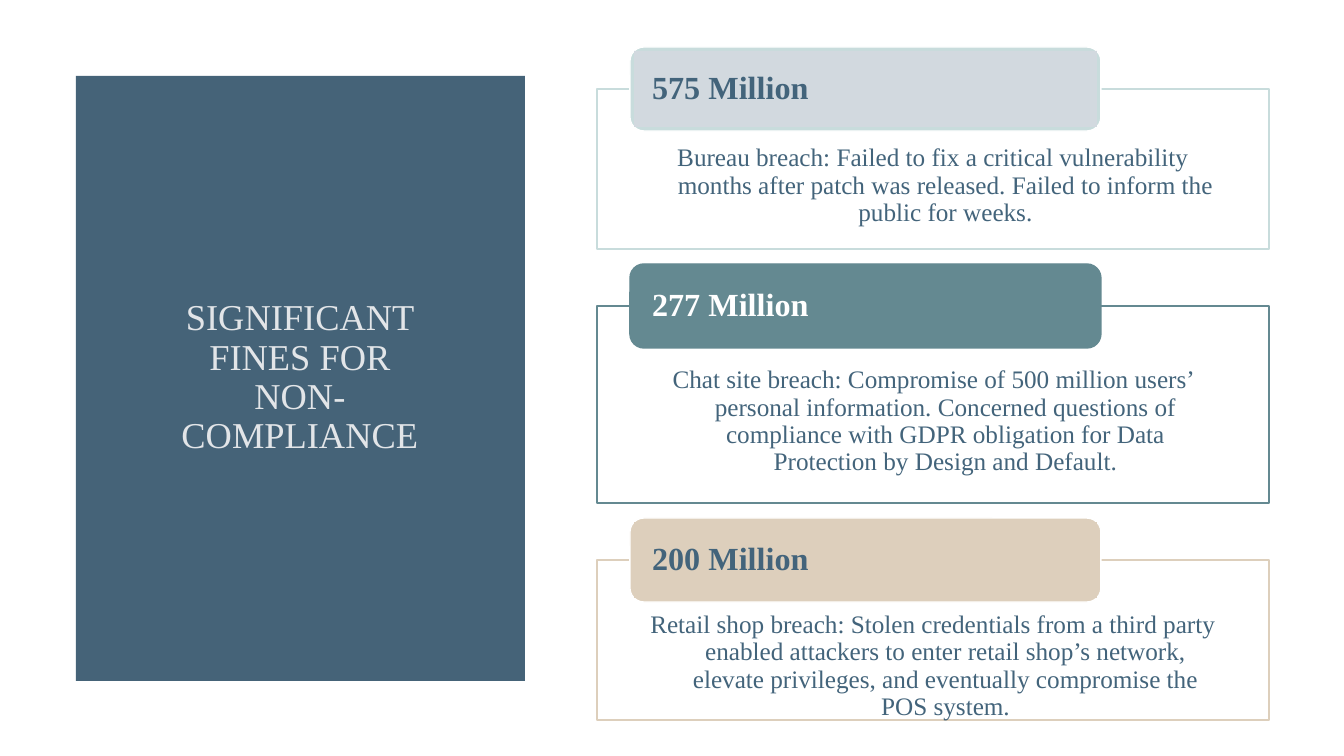
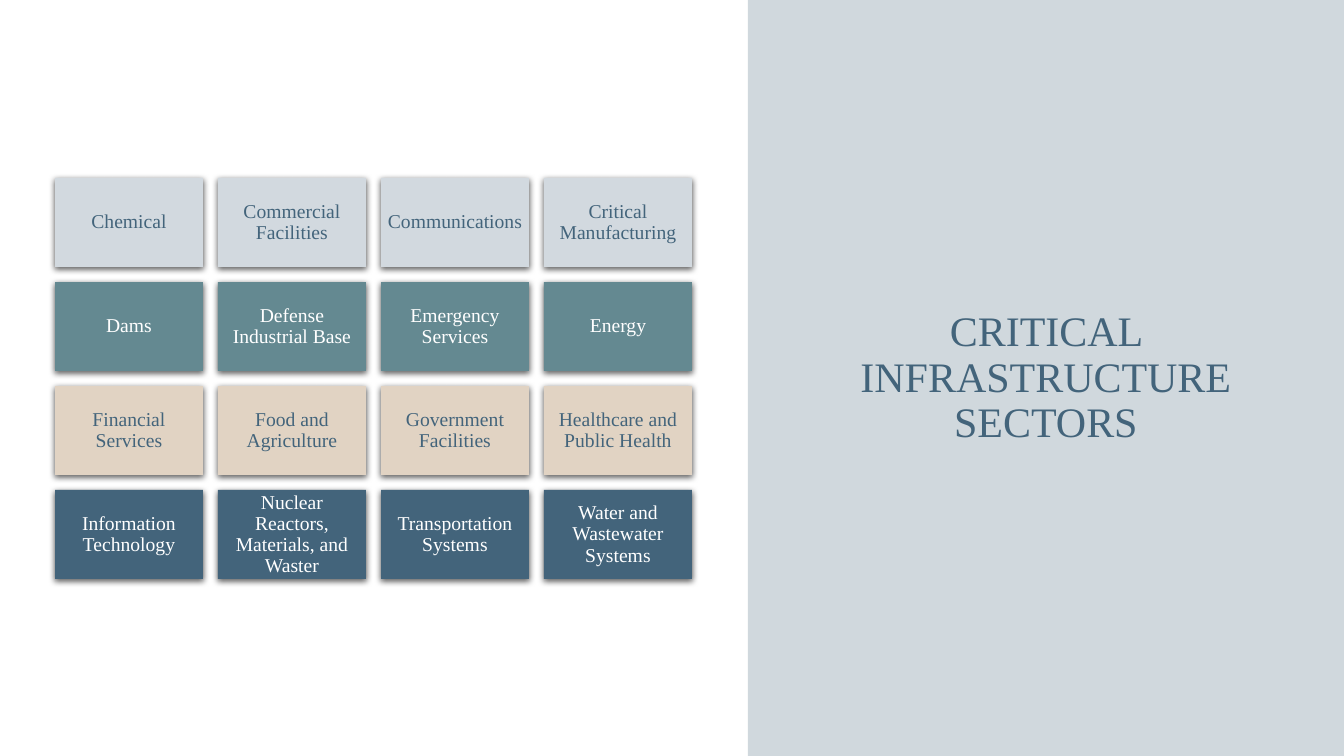
from lxml import etree
from pptx import Presentation
from pptx.dml.color import RGBColor
from pptx.enum.shapes import MSO_SHAPE
from pptx.enum.text import MSO_ANCHOR, MSO_AUTO_SIZE, PP_ALIGN
from pptx.oxml.ns import qn
from pptx.util import Pt

PX = 914400 / 100.8
PAGE_WIDTH, PAGE_HEIGHT = 1344, 756
TITLE_ONLY = 5

RECTANGLE, ROUNDED = MSO_SHAPE.RECTANGLE, MSO_SHAPE.ROUNDED_RECTANGLE
TOP, MIDDLE = MSO_ANCHOR.TOP, MSO_ANCHOR.MIDDLE
LEFT, CENTER = PP_ALIGN.LEFT, PP_ALIGN.CENTER
NO_AUTOFIT = MSO_AUTO_SIZE.NONE

FONT = "Times New Roman"
WHITE = RGBColor(0xFF, 0xFF, 0xFF)
PANEL_BLUE = RGBColor(0x45, 0x63, 0x78)
PANEL_PALE = RGBColor(0xD0, 0xD8, 0xDD)
TITLE_PALE = RGBColor(0xE2, 0xE5, 0xE8)
NAVY = RGBColor(0x43, 0x64, 0x7B)
MIST = RGBColor(0xD2, 0xD9, 0xDF)
MINT = RGBColor(0xC8, 0xDC, 0xDC)
TEAL = RGBColor(0x64, 0x89, 0x91)
SAND = RGBColor(0xDD, 0xCF, 0xBC)
SAND_PALE = RGBColor(0xE1, 0xD3, 0xC3)

TITLE_INSETS = (10, 5, 10, 5)
FRAME_LEFT, FRAME_TOP, FRAME_WIDTH, FRAME_GAP = 597, 89, 672, 57
FRAME_INSETS = (52, 52, 52, 18)
HANGING_INDENT = 25
CHIP_LEFT, CHIP_WIDTH, CHIP_HEIGHT, CHIP_RIM = 630, 471, 84, 4
CHIP_INSETS = (18, 0, 18, 0)
GRID_LEFT, GRID_TOP = 55, 178
TILE_WIDTH, TILE_HEIGHT, TILE_GAP = 148, 89, 15
TILE_INSETS = (6, 6, 6, 6)

FINES = [
    ("575 Million",
     "Bureau breach: Failed to fix a critical vulnerability months after "
     "patch was released. Failed to inform the public for weeks.",
     160, MINT, MIST, WHITE, NAVY, MIDDLE),
    ("277 Million",
     "Chat site breach: Compromise of 500 million users’ personal information. "
     "Concerned questions of compliance with GDPR obligation for Data "
     "Protection by Design and Default.",
     197, TEAL, TEAL, TEAL, WHITE, MIDDLE),
    ("200 Million",
     "Retail shop breach: Stolen credentials from a third party enabled "
     "attackers to enter retail shop’s network, elevate privileges, and "
     "eventually compromise the POS system.",
     160, SAND, SAND, WHITE, NAVY, TOP),
]

SECTOR_ROWS = [
    (MIST, NAVY, ["Chemical", "Commercial Facilities", "Communications",
                  "Critical Manufacturing"]),
    (TEAL, WHITE, ["Dams", "Defense Industrial Base", "Emergency Services",
                   "Energy"]),
    (SAND_PALE, NAVY, ["Financial Services", "Food and Agriculture",
                       "Government Facilities", "Healthcare and Public Health"]),
    (NAVY, WHITE, ["Information Technology",
                   "Nuclear Reactors, Materials, and Waster",
                   "Transportation Systems", "Water and Wastewater Systems"]),
]


def px(length):
    return round(length * PX)


def set_attributes(target, values):
    for name, value in values.items():
        setattr(target, name, value)


def write(box, text, size, color, insets, align=CENTER, anchor=MIDDLE, bold=False):
    frame = box.text_frame
    frame.text = text
    left, top, right, bottom = map(px, insets)
    set_attributes(frame, {
        "margin_left": left, "margin_top": top,
        "margin_right": right, "margin_bottom": bottom,
        "word_wrap": True, "auto_size": NO_AUTOFIT, "vertical_anchor": anchor,
    })
    para = frame.paragraphs[0]
    set_attributes(para, {"alignment": align, "line_spacing": 0.9})
    span = para.runs[0]
    set_attributes(span.font, {"name": FONT, "size": Pt(size), "bold": bold})
    span.font.color.rgb = color
    return para


def add_box(page, bounds, fill, line=None, kind=RECTANGLE):
    box = page.shapes.add_shape(kind, *map(px, bounds))
    box.shadow.inherit = False
    box.fill.solid()
    box.fill.fore_color.rgb = fill
    if line is None:
        box.line.fill.background()
    else:
        box.line.color.rgb = line
        box.line.width = Pt(1)
    return box


def add_page(deck, panel_bounds, panel_color):
    page = deck.slides.add_slide(deck.slide_layouts[TITLE_ONLY])
    panel = add_box(page, panel_bounds, panel_color)
    page.shapes.title._element.addprevious(panel._element)
    return page


def set_title(page, text, bounds, size, color):
    title = page.shapes.title
    set_attributes(title, dict(zip(("left", "top", "width", "height"), map(px, bounds))))
    write(title, text, size, color, TITLE_INSETS)


def hang_first_line(para):
    properties = para._p.get_or_add_pPr()
    properties.set("marL", str(px(HANGING_INDENT)))
    properties.set("indent", str(-px(HANGING_INDENT)))


def add_drop_shadow(box):
    effects = box._element.spPr.find(qn("a:effectLst"))
    shadow = etree.SubElement(effects, qn("a:outerShdw"), {
        "blurRad": str(Pt(4.5)), "dist": str(Pt(1.5)),
        "dir": "5400000", "algn": "ctr", "rotWithShape": "0",
    })
    color = etree.SubElement(shadow, qn("a:srgbClr"), val="000000")
    etree.SubElement(color, qn("a:alpha"), val="63000")


def add_fine(page, top, fine):
    amount, story, height, rim_color, face_color, rim_line, amount_color, anchor = fine
    frame = add_box(page, (FRAME_LEFT, top, FRAME_WIDTH, height), WHITE, rim_color)
    hang_first_line(write(frame, story, 18, NAVY, FRAME_INSETS, anchor=anchor))

    chip_top = top - CHIP_HEIGHT // 2
    add_box(page, (CHIP_LEFT, chip_top, CHIP_WIDTH, CHIP_HEIGHT),
            rim_color, rim_line, ROUNDED)
    face = add_box(page, (CHIP_LEFT + CHIP_RIM, chip_top + CHIP_RIM,
                          CHIP_WIDTH - 2 * CHIP_RIM, CHIP_HEIGHT - 2 * CHIP_RIM),
                   face_color)
    write(face, amount, 23, amount_color, CHIP_INSETS, align=LEFT, bold=True)


def add_tile(page, row, column, sector, fill, color):
    left = GRID_LEFT + column * (TILE_WIDTH + TILE_GAP)
    top = GRID_TOP + row * (TILE_HEIGHT + TILE_GAP)
    tile = add_box(page, (left, top, TILE_WIDTH, TILE_HEIGHT), fill)
    add_drop_shadow(tile)
    write(tile, sector, 14, color, TILE_INSETS)


def build_fines(deck):
    page = add_page(deck, (76, 76, 449, 605), PANEL_BLUE)
    set_title(page, "SIGNIFICANT FINES FOR NON-COMPLIANCE",
              (151, 151, 298, 454), 26, TITLE_PALE)
    top = FRAME_TOP
    for fine in FINES:
        add_fine(page, top, fine)
        top += fine[2] + FRAME_GAP


def build_sectors(deck):
    page = add_page(deck, (748, 0, PAGE_WIDTH - 748, PAGE_HEIGHT), PANEL_PALE)
    set_title(page, "CRITICAL INFRASTRUCTURE SECTORS",
              (818, 76, 456, 605), 30, NAVY)
    for row, (fill, color, sectors) in enumerate(SECTOR_ROWS):
        for column, sector in enumerate(sectors):
            add_tile(page, row, column, sector, fill, color)


def main():
    deck = Presentation()
    set_attributes(deck, {"slide_width": px(PAGE_WIDTH), "slide_height": px(PAGE_HEIGHT)})
    build_fines(deck)
    build_sectors(deck)
    deck.save("out.pptx")


if __name__ == "__main__":
    main()
